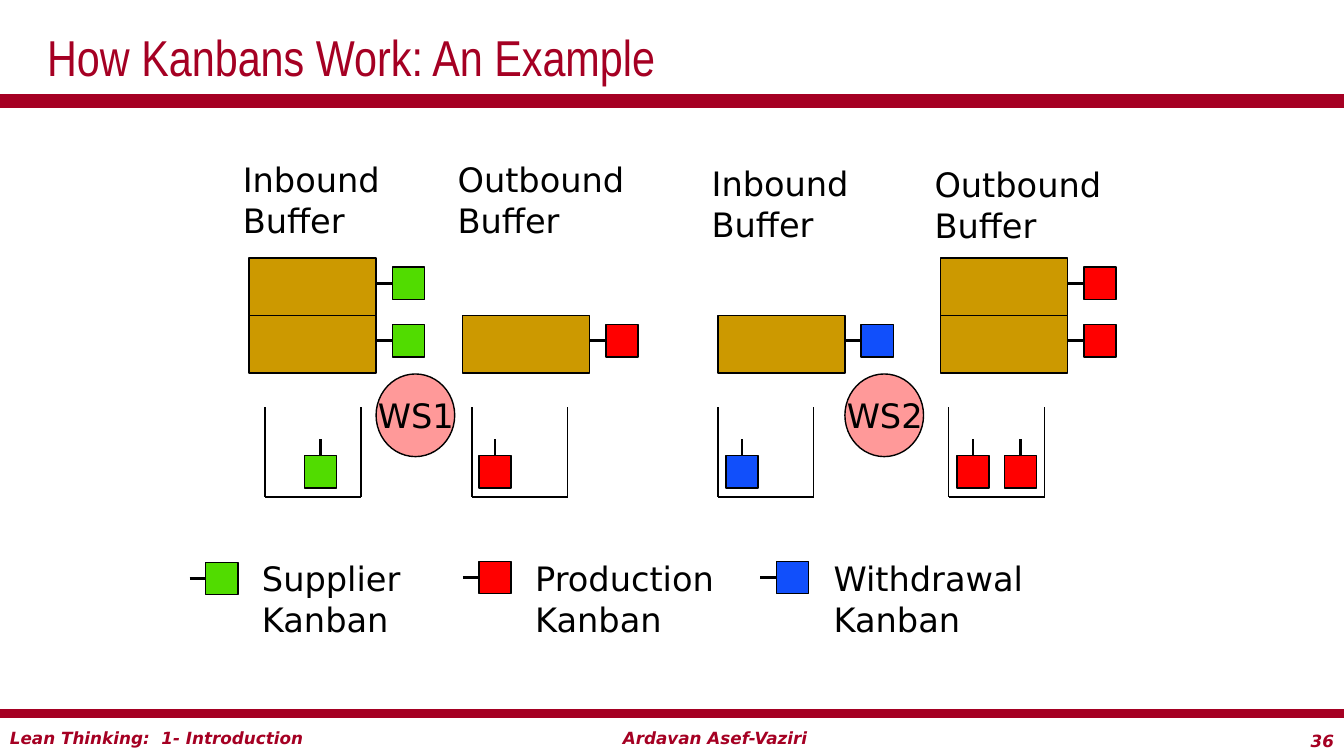
from lxml import etree
from pptx import Presentation
from pptx.dml.color import RGBColor
from pptx.enum.shapes import MSO_CONNECTOR, MSO_SHAPE
from pptx.enum.text import MSO_ANCHOR, PP_ALIGN
from pptx.oxml.ns import qn
from pptx.util import Inches, Pt

CRIMSON, BLACK = "A50023", "000000"
BOX, STATION = "CC9900", "FF9999"
SUPPLIER, PRODUCTION, WITHDRAWAL = "51DC00", "FF0000", "114FFB"
CARD, STEM = 0.32, 0.16
BOX_W, BOX_H = 1.26, 0.57

prs = Presentation()
prs.slide_width, prs.slide_height = Inches(13.33), Inches(7.5)
s = prs.slides.add_slide(prs.slide_layouts[6])


def add_block(kind, x, y, w, h, fill):
    sp = s.shapes.add_shape(kind, Inches(x), Inches(y), Inches(w), Inches(h))
    sp.shadow.inherit = False
    sp.fill.solid()
    sp.fill.fore_color.rgb = RGBColor.from_string(fill)
    sp.line.color.rgb = RGBColor.from_string(BLACK)
    sp.line.width = Pt(1)


def add_line(x1, y1, x2, y2, width, color=BLACK):
    cn = s.shapes.add_connector(MSO_CONNECTOR.STRAIGHT, Inches(x1), Inches(y1),
                                Inches(x2), Inches(y2))
    cn.line.color.rgb = RGBColor.from_string(color)
    cn.line.width = Pt(width)
    etree.SubElement(cn._element.spPr, qn("a:effectLst"))


# Title and footer rules
for y, width in [(1, 10), (7.08, 6)]:
    add_line(0, y, 13.33, y, width, CRIMSON)

# Buffers: left edge, number of full boxes, kanban colour
side_cards = []
for x, count, color in [(2.47, 2, SUPPLIER), (4.59, 1, PRODUCTION),
                        (7.12, 1, WITHDRAWAL), (9.33, 2, PRODUCTION)]:
    for i in range(count):
        y = 3.13 - i * BOX_H
        add_block(MSO_SHAPE.RECTANGLE, x, y, BOX_W, BOX_H, BOX)
        side_cards.append((x + BOX_W, y + 0.25, color))

# Kanbans with a stem on the left: those on the boxes, then the legend
side_cards += [(1.88, 5.74, SUPPLIER), (4.59, 5.73, PRODUCTION),
               (7.54, 5.73, WITHDRAWAL)]
for x, y, color in side_cards:
    add_line(x, y, x + STEM, y, 2)
    add_block(MSO_SHAPE.RECTANGLE, x + STEM, y - CARD / 2, CARD, CARD, color)

# Workstations
for x in (3.73, 8.38):
    add_block(MSO_SHAPE.OVAL, x, 3.71, 0.78, 0.82, STATION)

# Open bins and the waiting kanbans in them: left edge, stem positions, colour
for x, stems, color in [(2.63, [3.18], SUPPLIER), (4.68, [4.91], PRODUCTION),
                        (7.12, [7.36], WITHDRAWAL),
                        (9.41, [9.65, 10.12], PRODUCTION)]:
    right = x + 0.95
    add_line(x, 4.04, x, 4.93, 1)
    add_line(right, 4.04, right, 4.93, 1)
    add_line(x, 4.93, right, 4.93, 1)
    for stem in stems:
        add_line(stem, 4.36, stem, 4.52, 2)
        add_block(MSO_SHAPE.RECTANGLE, stem - CARD / 2, 4.52, CARD, CARD, color)

# Text: left, top, width, height, wording, size, colour
texts = [
    (0.37, 0, 12.97, 1.11, "How Kanbans Work: An Example", 36, CRIMSON),
    (2.31, 1.53, 1.66, 0.91, "Inbound Buffer", 24, BLACK),
    (4.44, 1.53, 1.86, 0.91, "Outbound Buffer", 24, BLACK),
    (6.96, 1.57, 1.66, 0.91, "Inbound Buffer", 24, BLACK),
    (9.17, 1.58, 1.88, 0.91, "Outbound Buffer", 24, BLACK),
    (3.65, 3.87, 1.11, 0.51, "WS1", 24, BLACK),
    (8.3, 3.87, 1.11, 0.51, "WS2", 24, BLACK),
    (2.5, 5.49, 1.8, 0.91, "Supplier Kanban", 24, BLACK),
    (5.21, 5.49, 3, 0.91, "Production Kanban", 24, BLACK),
    (8.17, 5.49, 2.33, 0.91, "Withdrawal Kanban", 24, BLACK),
    (0, 7.17, 6.22, 0.3, "Lean Thinking:  1- Introduction", 12, CRIMSON),
    (6.08, 7.17, 4.47, 0.3, "Ardavan Asef-Vaziri", 12, CRIMSON),
    (12.33, 7.2, 1, 0.3, "36", 12, CRIMSON),
]
for x, y, w, h, wording, size, color in texts:
    tf = s.shapes.add_textbox(Inches(x), Inches(y), Inches(w), Inches(h)).text_frame
    tf.word_wrap = True
    is_title, is_footer = size == 36, size == 12
    tf.vertical_anchor = MSO_ANCHOR.MIDDLE if is_title else MSO_ANCHOR.TOP
    p = tf.paragraphs[0]
    p.text = wording
    p.alignment = PP_ALIGN.RIGHT if wording == "36" else PP_ALIGN.LEFT
    p.font.name = "Arial Narrow" if is_title else "DejaVu Sans"
    p.font.size = Pt(size)
    p.font.bold = p.font.italic = is_footer
    p.font.color.rgb = RGBColor.from_string(color)

prs.save("out.pptx")
